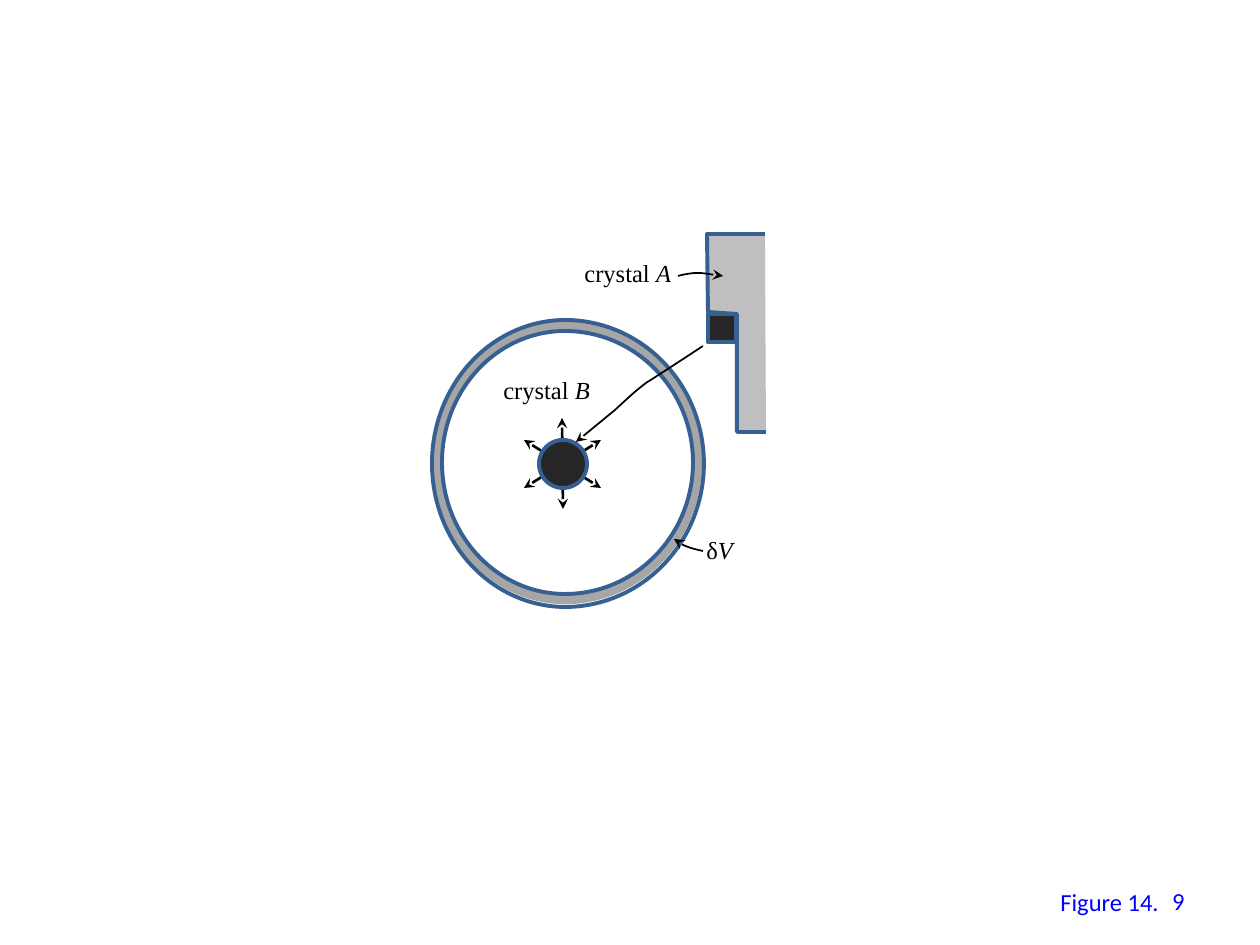
import pptx
import pptx.util
import pptx.dml.color
import pptx.enum.shapes
import pptx.enum.text
import pptx.oxml
import pptx.oxml.ns

PX = 914400 / 126
SHAPE = pptx.enum.shapes.MSO_SHAPE
qn = pptx.oxml.ns.qn


def emu(*lengths):
    return [round(n * PX) for n in lengths]


def style(sp, line, width, fill=None, ends=()):
    rgb = pptx.dml.color.RGBColor.from_string
    sp.line.color.rgb = rgb(line)
    sp.line.width = pptx.util.Pt(width)
    if fill:
        sp.fill.solid()
        sp.fill.fore_color.rgb = rgb(fill)
    elif hasattr(sp, "fill"):
        sp.fill.background()
    ln = sp.line._get_or_add_ln()
    for end in ends:
        ln.append(ln.makeelement(qn("a:" + end), {"type": "stealth"}))
    if hasattr(sp, "shadow"):
        sp.shadow.inherit = False
    else:
        spPr = sp._element.spPr
        spPr.append(spPr.makeelement(qn("a:effectLst"), {}))


prs = pptx.Presentation()
prs.slide_width, prs.slide_height = emu(1260, 945)
s = prs.slides.add_slide(prs.slide_layouts[6])

for ends in [(601, 488, 524, 440), (563, 509, 562, 418), (601, 440, 524, 488)]:
    sp = s.shapes.add_connector(pptx.enum.shapes.MSO_CONNECTOR.STRAIGHT, *emu(*ends))
    style(sp, "000000", 1.5, ends=("headEnd", "tailEnd"))

sp = s.shapes.add_shape(SHAPE.OVAL, *emu(539, 440, 48, 48))
style(sp, "376092", 2.25, "262626")

arcs = [
    ((432, 326, 265, 273), (438, 326, 255, 273), "A6A6A6", 6),
    ((426, 320, 278, 287), (432, 320, 267, 287), "376092", 2.25),
    ((437, 331, 256, 263), (442, 331, 246, 263), "376092", 2.25),
]
for right, left, color, width in arcs:
    for box in (right, left):
        sp = s.shapes.add_shape(SHAPE.ARC, *emu(*box))
        sp.adjustments[0] = 162
        sp.adjustments[1] = 54.065
        if box == left:
            sp._element.spPr.xfrm.set("flipH", "1")
        style(sp, color, width)

crystal = [(765, 234), (707, 234), (708, 312), (737, 314), (737, 432), (766, 432)]
fb = s.shapes.build_freeform(*crystal[0], scale=PX)
fb.add_line_segments(crystal[1:], close=False)
style(fb.convert_to_shape(), "376092", 2.25, "BFBFBF")

sp = s.shapes.add_shape(SHAPE.RECTANGLE, *emu(708, 314, 28, 28))
style(sp, "376092", 2.25, "262626")

curves = [
    [(576, 442), (615, 410), (627, 399), (633, 393), (646, 383), (662, 373), (703, 346), (703, 346)],
    [(723, 276), (713, 275), (704, 273), (697, 273), (689, 273), (678, 276), (678, 276)],
    [(674, 539), (679, 543), (683, 545), (688, 547), (693, 549), (703, 551), (703, 551)],
]
for points in curves:
    fb = s.shapes.build_freeform(*points[0], scale=PX)
    fb.add_line_segments(points[1:], close=False)
    sp = fb.convert_to_shape()
    lines = list(sp._element.iter(qn("a:lnTo")))
    for i in range(len(lines) % 3, len(lines), 3):
        curve = lines[i].makeelement(qn("a:cubicBezTo"), {})
        lines[i].addprevious(curve)
        for line in lines[i:i + 3]:
            curve.append(line[0])
            line.getparent().remove(line)
    style(sp, "000000", 1, ends=("headEnd",))

labels = [
    ((491, 369, 113, 43), "crystal ", "B", "Times New Roman", "000000"),
    ((572, 252, 118, 43), "crystal ", "A", "Times New Roman", "000000"),
    ((694, 529, 60, 43), "δ", "V", "Times New Roman", "000000"),
    ((1048, 881, 125, 43), "Figure 14.", "", "Calibri", "0000FF"),
    ((903, 876, 294, 50), "9", "", "Calibri", "0000FF"),
]
for box, text, symbol, font, color in labels:
    sp = s.shapes.add_textbox(*emu(*box))
    tf = sp.text_frame
    tf.word_wrap = False
    p = tf.paragraphs[0]
    p.font.name = font
    p.font.size = pptx.util.Pt(14)
    p.font.color.rgb = pptx.dml.color.RGBColor.from_string(color)
    p.add_run().text = text
    if symbol:
        r = p.add_run()
        r.text = symbol
        r.font.italic = True

tf.word_wrap = True
tf.vertical_anchor = pptx.enum.text.MSO_ANCHOR.MIDDLE
p.alignment = pptx.enum.text.PP_ALIGN.RIGHT

prs.save("out.pptx")
